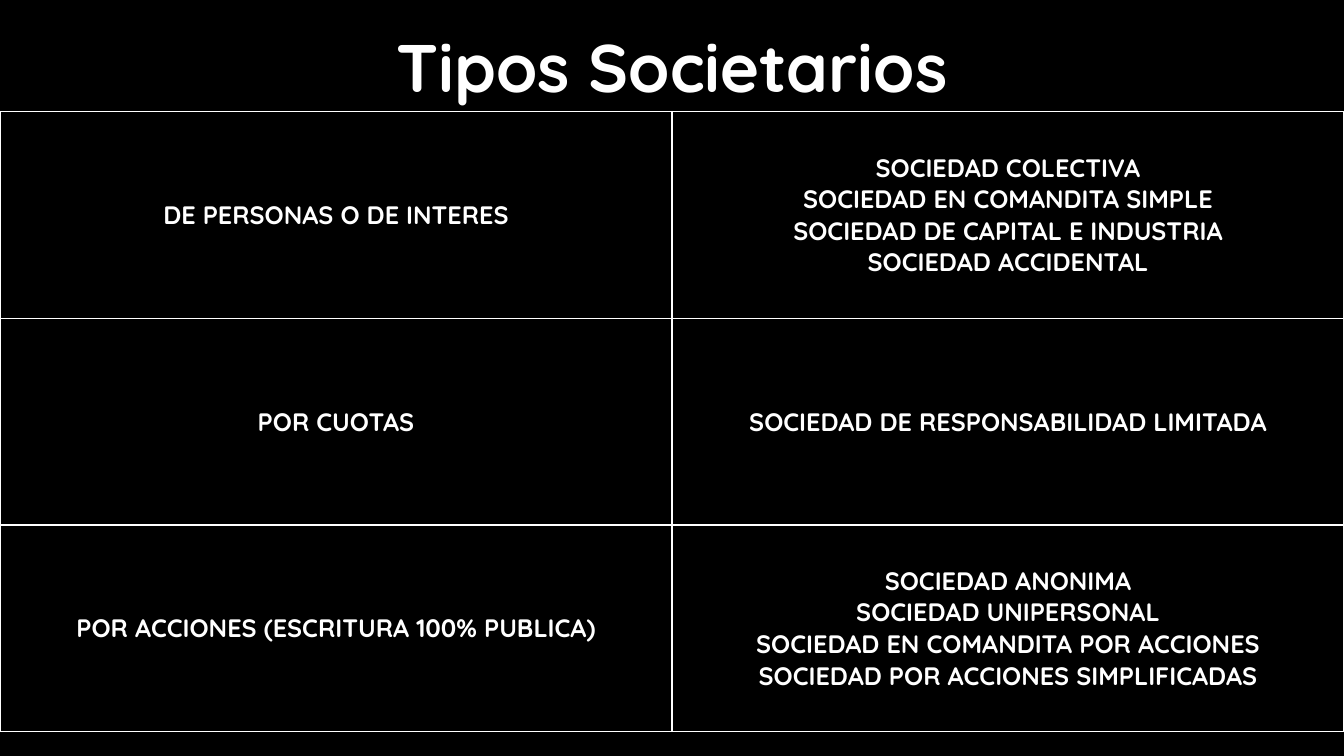
from lxml.etree import SubElement
from pptx import Presentation
from pptx.dml.color import RGBColor
from pptx.enum.text import MSO_ANCHOR, PP_ALIGN
from pptx.oxml.ns import qn
from pptx.util import Inches, Pt

BLACK = RGBColor(0x00, 0x00, 0x00)
WHITE = RGBColor(0xFF, 0xFF, 0xFF)
FONT = "Quicksand"

SLIDE_WIDTH = Inches(13.33)
SLIDE_HEIGHT = Inches(7.5)
TITLE_MARGIN = Inches(0.3)
TITLE_TOP = Inches(0.2)
TABLE_TOP = Inches(1.11)
ROW_HEIGHT = Inches(2.05)
BORDER_WIDTH = Pt(1)

COMPANY_TYPES = [
    (["DE PERSONAS O DE INTERES"],
     ["SOCIEDAD COLECTIVA", "SOCIEDAD EN COMANDITA SIMPLE",
      "SOCIEDAD DE CAPITAL E INDUSTRIA", "SOCIEDAD ACCIDENTAL"]),
    (["POR CUOTAS"],
     ["SOCIEDAD DE RESPONSABILIDAD LIMITADA"]),
    (["POR ACCIONES (ESCRITURA 100% PUBLICA)"],
     ["SOCIEDAD ANONIMA", "SOCIEDAD UNIPERSONAL",
      "SOCIEDAD EN COMANDITA POR ACCIONES",
      "SOCIEDAD POR ACCIONES SIMPLIFICADAS"]),
]


def write_centred(text_frame, lines, size):
    """Write one centred, bold white paragraph per line."""
    text_frame.text = "\n".join(lines)
    for paragraph in text_frame.paragraphs:
        paragraph.alignment = PP_ALIGN.CENTER
        paragraph.line_spacing = 1.0
        paragraph.space_before = Pt(0)
        paragraph.font.name = FONT
        paragraph.font.size = Pt(size)
        paragraph.font.bold = True
        paragraph.font.color.rgb = WHITE


def add_borders(cell):
    properties = cell._tc.get_or_add_tcPr()
    for side in ("a:lnL", "a:lnR", "a:lnT", "a:lnB"):
        line = SubElement(properties, qn(side), w=str(BORDER_WIDTH))
        fill = SubElement(line, qn("a:solidFill"))
        SubElement(fill, qn("a:srgbClr"), val=str(WHITE))


def place_title(slide, text):
    title = slide.shapes.title
    title.left, title.top = TITLE_MARGIN, TITLE_TOP
    title.width = SLIDE_WIDTH - 2 * TITLE_MARGIN
    title.height = TABLE_TOP - TITLE_TOP
    title.text_frame.vertical_anchor = MSO_ANCHOR.TOP
    write_centred(title.text_frame, [text], 48)


def add_type_table(slide, rows):
    table = slide.shapes.add_table(
        len(rows), len(rows[0]), 0, TABLE_TOP,
        SLIDE_WIDTH, ROW_HEIGHT * len(rows)).table
    table.first_row = False
    table.horz_banding = False
    for row_index, row in enumerate(rows):
        table.rows[row_index].height = ROW_HEIGHT
        for column_index, lines in enumerate(row):
            cell = table.cell(row_index, column_index)
            cell.vertical_anchor = MSO_ANCHOR.MIDDLE
            add_borders(cell)
            cell.fill.background()
            write_centred(cell.text_frame, lines, 18)


def main():
    presentation = Presentation()
    presentation.slide_width = SLIDE_WIDTH
    presentation.slide_height = SLIDE_HEIGHT
    title_only = presentation.slide_layouts.get_by_name("Title Only")
    slide = presentation.slides.add_slide(title_only)
    slide.background.fill.solid()
    slide.background.fill.fore_color.rgb = BLACK
    place_title(slide, "Tipos Societarios")
    add_type_table(slide, COMPANY_TYPES)
    presentation.save("out.pptx")


if __name__ == "__main__":
    main()
